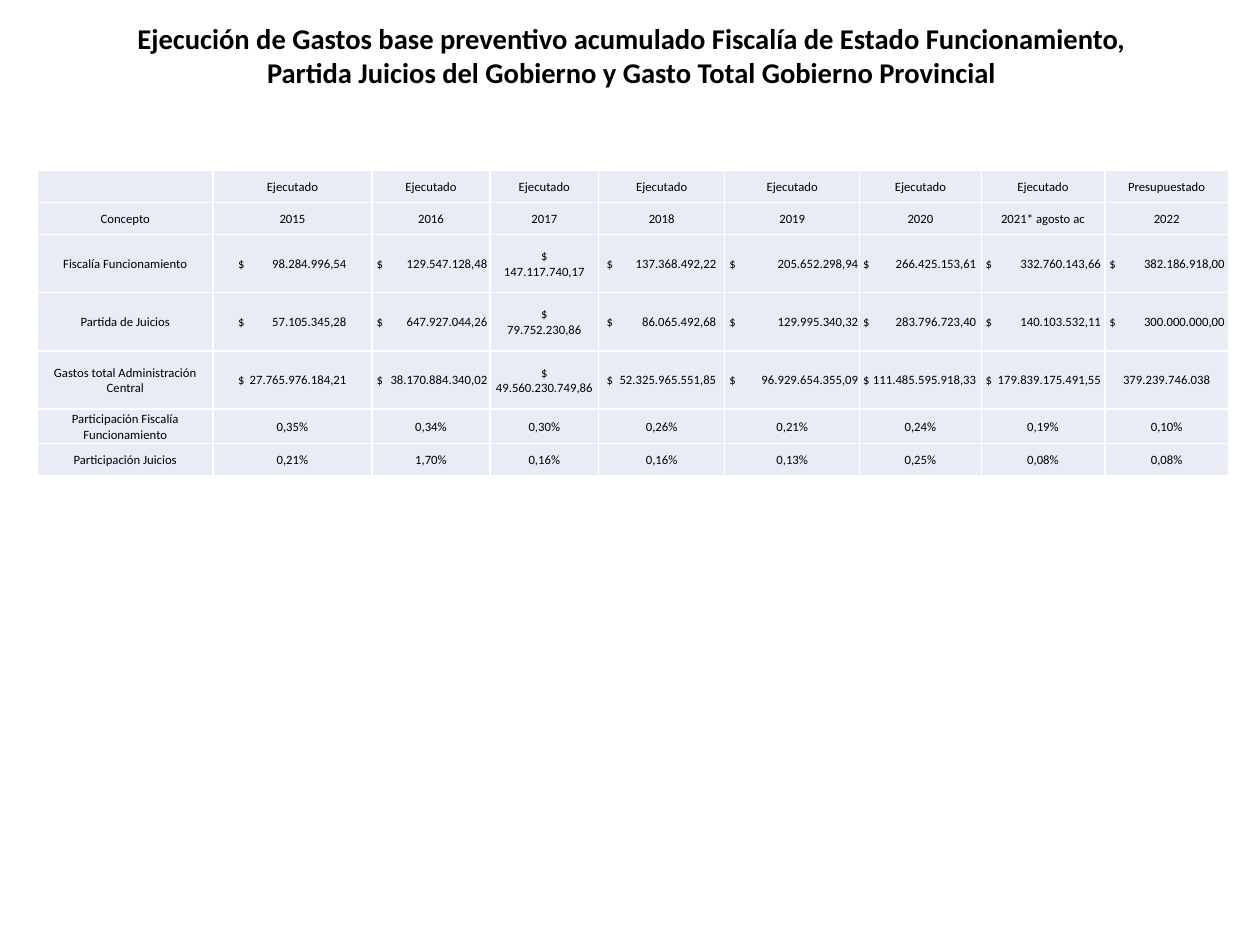
"""Builds the slide on spending by Fiscalía de Estado and the provincial government."""
from lxml import etree
from pptx import Presentation, util as u
from pptx.dml import color
from pptx.enum import text as t
from pptx.oxml import ns

HEADING = [
    "Ejecución de Gastos base preventivo acumulado Fiscalía de Estado Funcionamiento, ",
    "Partida Juicios del Gobierno y Gasto Total Gobierno Provincial ",
]
CONCEPTS = ["", "Concepto", "Fiscalía Funcionamiento", "Partida de Juicios",
            "Gastos total Administración Central",
            "Participación Fiscalía Funcionamiento", "Participación Juicios"]
YEARS = [
    ("Ejecutado", "2015", "$ 98.284.996,54", "$ 57.105.345,28", "$ 27.765.976.184,21", "0,35%", "0,21%"),
    ("Ejecutado", "2016", "$ 129.547.128,48", "$ 647.927.044,26", "$ 38.170.884.340,02", "0,34%", "1,70%"),
    ("Ejecutado", "2017", "$ 147.117.740,17", "$ 79.752.230,86", "$ 49.560.230.749,86", "0,30%", "0,16%"),
    ("Ejecutado", "2018", "$ 137.368.492,22", "$ 86.065.492,68", "$ 52.325.965.551,85", "0,26%", "0,16%"),
    ("Ejecutado", "2019", "$ 205.652.298,94", "$ 129.995.340,32", "$ 96.929.654.355,09", "0,21%", "0,13%"),
    ("Ejecutado", "2020", "$ 266.425.153,61", "$ 283.796.723,40", "$ 111.485.595.918,33", "0,24%", "0,25%"),
    ("Ejecutado", "2021* agosto ac", "$ 332.760.143,66", "$ 140.103.532,11", "$ 179.839.175.491,55", "0,19%", "0,08%"),
    ("Presupuestado", "2022", "$ 382.186.918,00", "$ 300.000.000,00", "379.239.746.038", "0,10%", "0,08%"),
]
SLIDE_CM = (28, 21)
CM_PER_INCH = 2.54
WIDTHS = [1.53, 1.39, 1.03, 0.95, 1.1, 1.18, 1.06, 1.08, 1.08]
TABLE_WIDTH = 10.42
HEIGHTS = [0.28, 0.28, 0.51, 0.51, 0.51, 0.3, 0.28]
AMOUNT_SPANS = {1: (0.22, 1.17), 2: (0.04, 1.01), 4: (0.07, 1.03), 5: (0.04, 1.17),
                6: (0.03, 1.02), 7: (0.04, 1.05), 8: (0.04, 1.05)}
BLACK, WHITE, PALE = "000000", "FFFFFF", "E9EBF5"
CENTER, LEFT = t.PP_ALIGN.CENTER, t.PP_ALIGN.LEFT


def rgb(hex_code):
    return color.RGBColor.from_string(hex_code)


def style(paragraph, size, bold=False, align=CENTER):
    paragraph.alignment = align
    font = paragraph.font
    font.name, font.size, font.bold = "Calibri", u.Pt(size), bold
    font.color.rgb = rgb(BLACK)


def add_borders(cell):
    properties = cell._tc.get_or_add_tcPr()
    for side in ("L", "R", "T", "B"):
        line = etree.SubElement(properties, ns.qn(f"a:ln{side}"), w=str(u.Pt(1)))
        solid = etree.SubElement(line, ns.qn("a:solidFill"))
        etree.SubElement(solid, ns.qn("a:srgbClr"), val=WHITE)


def add_right_tab(paragraph, position):
    tabs = etree.SubElement(paragraph._p.get_or_add_pPr(), ns.qn("a:tabLst"))
    etree.SubElement(tabs, ns.qn("a:tab"), pos=str(u.Inches(position)), algn="r")


def fill_cell(cell, content, column):
    add_borders(cell)
    cell.fill.solid()
    cell.fill.fore_color.rgb = rgb(PALE)
    cell.vertical_anchor = t.MSO_ANCHOR.MIDDLE
    cell.margin_left = cell.margin_right = cell.margin_top = u.Inches(0.01)
    cell.margin_bottom = 0
    is_amount = content.startswith("$")
    aligned = is_amount and column in AMOUNT_SPANS
    if is_amount:
        content = content.replace(" ", "\t" if aligned else "\v")
    cell.text = content
    paragraph = cell.text_frame.paragraphs[0]
    if aligned:
        start, end = AMOUNT_SPANS[column]
        cell.margin_left, cell.margin_right = u.Inches(start), 0
        add_right_tab(paragraph, end - start)
    style(paragraph, 8, align=LEFT if aligned else CENTER)
    if not content:
        etree.SubElement(paragraph._p, ns.qn("a:endParaRPr"), sz="800")


def main():
    deck = Presentation()
    deck.slide_width, deck.slide_height = (u.Inches(side / CM_PER_INCH) for side in SLIDE_CM)
    slide = deck.slides.add_slide(deck.slide_layouts[5])

    heading = slide.shapes.title
    heading.left, heading.top = u.Inches(0.18), u.Inches(0.13)
    heading.width, heading.height = u.Inches(10.75), u.Inches(0.71)
    frame = heading.text_frame
    frame.text = "\n".join(HEADING)
    frame.word_wrap, frame.auto_size = True, t.MSO_AUTO_SIZE.NONE
    frame.vertical_anchor = t.MSO_ANCHOR.TOP
    for paragraph in frame.paragraphs:
        style(paragraph, 18, bold=True)

    spending = slide.shapes.add_table(
        len(HEIGHTS), len(WIDTHS), u.Inches(0.33), u.Inches(1.49),
        u.Inches(TABLE_WIDTH), u.Inches(sum(HEIGHTS))).table
    spending.first_row = spending.horz_banding = False
    for row, height in zip(spending.rows, HEIGHTS):
        row.height = u.Inches(height)
    scale = TABLE_WIDTH / sum(WIDTHS)
    for column, (width, contents) in enumerate(zip(WIDTHS, [CONCEPTS, *YEARS])):
        spending.columns[column].width = u.Inches(width * scale)
        for row, content in enumerate(contents):
            fill_cell(spending.cell(row, column), content, column)

    deck.save("out.pptx")


if __name__ == "__main__":
    main()
